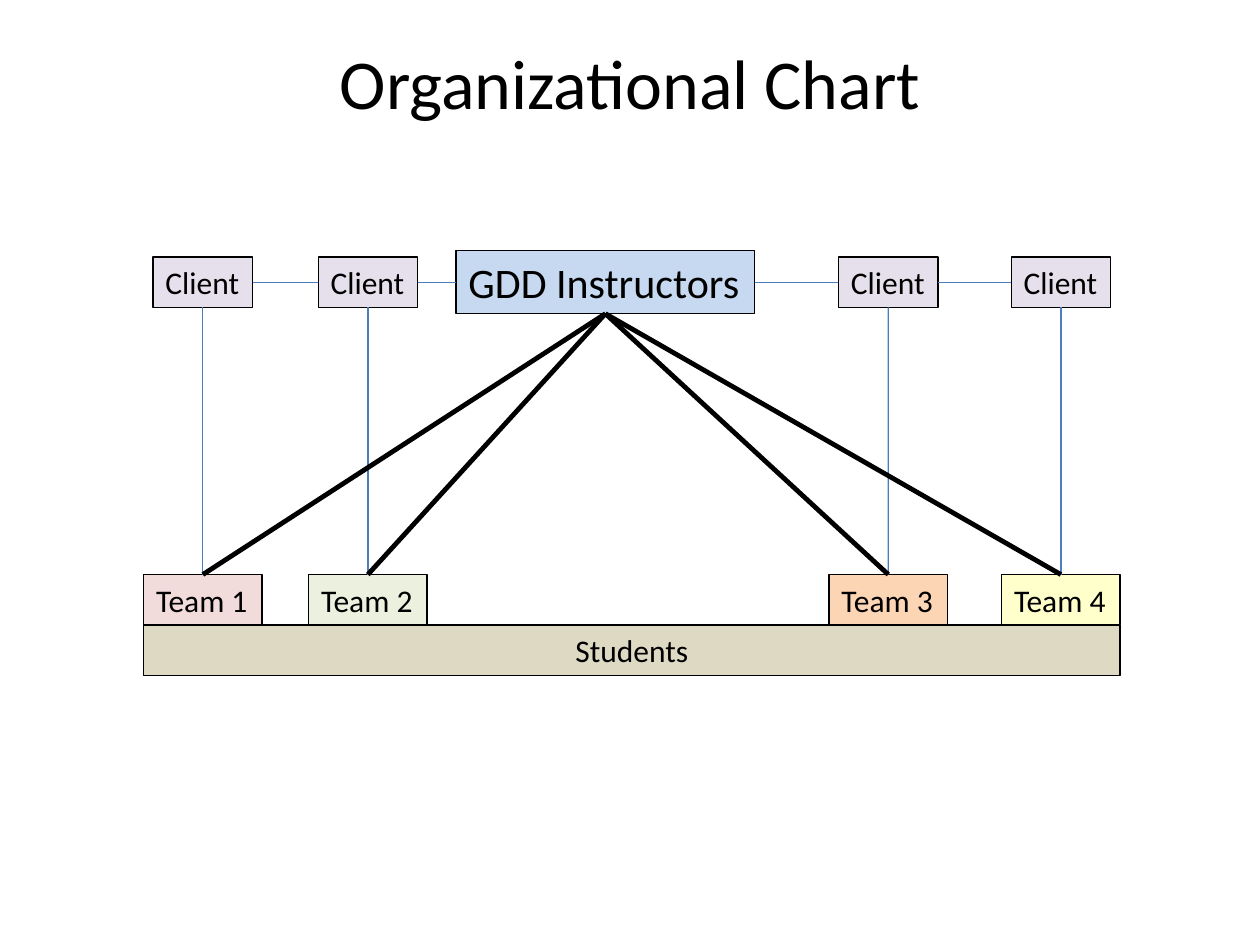
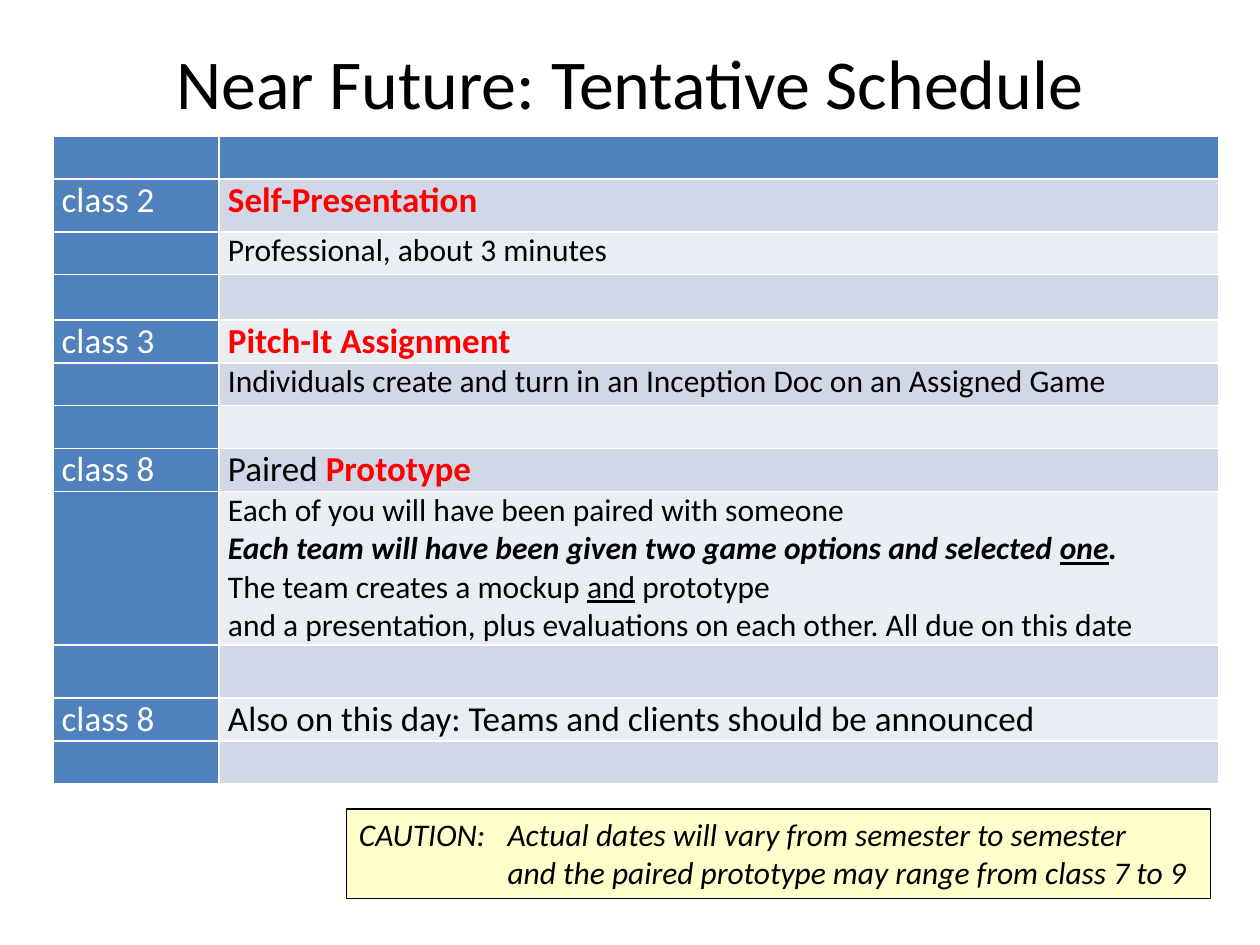
"""Build an organizational chart slide and a tentative schedule slide."""
from itertools import pairwise

from lxml.etree import SubElement
from pptx import Presentation
from pptx.dml.color import RGBColor
from pptx.enum.shapes import MSO_CONNECTOR as CONN
from pptx.enum.text import MSO_ANCHOR as ANCHOR, MSO_AUTO_SIZE as AUTO, PP_ALIGN as ALIGN
from pptx.oxml import parse_xml
from pptx.oxml.ns import nsdecls, qn
from pptx.util import Inches, Pt

FONT = "Calibri"
BLACK, WHITE, RED = "000000", "FFFFFF", "FF0000"
LILAC, SKY, SAND, YELLOW = "E6E0EC", "C6D9F1", "DDD9C3", "FFFFCC"
LINK, BLUE, BANDS = "4B7EBC", "4F81BD", ("E9EDF4", "D0D8E8")
TOP, LEFT, BOTTOM, RIGHT = range(4)

TEAMS = [
    ("Team 1", 1.61, "F2DCDB"),
    ("Team 2", 2.92, "EBF1DE"),
    ("Team 3", 7.05, "FCD5B5"),
    ("Team 4", 8.42, YELLOW),
]
CLIENT_W, TEAM_W, BOX_H = 0.79, 0.94, 0.4
CLIENT_Y, TEAM_Y = 2.04, 4.56

HEAD = {"size": 20}
KEY = {"size": 20, "color": RED, "bold": True}
STRONG = {"bold": True, "italic": True}
SCHEDULE = [
    (0.34, "", []),
    (0.42, "class 2", [[("Self-Presentation", KEY)]]),
    (0.34, "", [[("Professional, about 3 minutes", {})]]),
    (0.36, "", []),
    (0.34, "class 3", [[("Pitch-It Assignment", KEY)]]),
    (0.34, "", [[("Individuals create and turn in an Inception Doc on an Assigned Game", {})]]),
    (0.34, "", []),
    (0.34, "class 8", [[("Paired ", HEAD), ("Prototype", KEY)]]),
    (1.22, "", [
        [("Each of you will have been paired with someone", {})],
        [("Each team will have been given two game options and selected ", STRONG),
         ("one", {**STRONG, "underline": True}), (".", STRONG)],
        [("The team creates a mockup ", {}), ("and", {"underline": True}),
         (" prototype", {}), ("\n", {}),
         ("and a presentation, plus evaluations on each other. All due on this date", {})],
    ]),
    (0.42, "", []),
    (0.34, "class 8", [[("Also on this day: Teams and clients should be announced", HEAD)]]),
    (0.34, "", []),
]
COLS = (1.32, 7.93)
CAUTION = [
    "CAUTION:\tActual dates will vary from semester to semester",
    "and the paired prototype may range from class 7 to 9",
]
CAUTION_INDENT = 1.18


def rgb(color):
    return RGBColor.from_string(color)


def add_run(p, text, size=18, color=BLACK, bold=False, italic=False, underline=False):
    if text == "\n":
        p.add_line_break()
        return
    r = p.add_run()
    r.text = text
    f = r.font
    f.name, f.size, f.color.rgb = FONT, Pt(size), rgb(color)
    f.bold, f.italic, f.underline = bold, italic, underline


def fill_text(tf, paragraphs):
    for i, runs in enumerate(paragraphs):
        p = tf.add_paragraph() if i else tf.paragraphs[0]
        for text, style in runs:
            add_run(p, text, **style)


def add_slide(prs, title):
    s = prs.slides.add_slide(prs.slide_layouts[5])
    sp = s.shapes.title
    sp.left, sp.top, sp.width, sp.height = map(Inches, (0.5, 0.3, 9, 0.7))
    tf = sp.text_frame
    tf.vertical_anchor = ANCHOR.MIDDLE
    p = tf.paragraphs[0]
    p.alignment = ALIGN.CENTER
    add_run(p, title, size=40)
    return s


def add_box(s, at, fill, paragraphs, wrap=False):
    sp = s.shapes.add_textbox(*map(Inches, at))
    sp.fill.solid()
    sp.fill.fore_color.rgb = rgb(fill)
    sp.line.color.rgb = rgb(BLACK)
    sp.line.width = Pt(0.75)
    tf = sp.text_frame
    tf.word_wrap, tf.auto_size = wrap, AUTO.SHAPE_TO_FIT_TEXT
    fill_text(tf, paragraphs)
    return sp


def join(s, start, start_side, end, end_side, color=LINK, width=0.75):
    c = s.shapes.add_connector(CONN.STRAIGHT, 0, 0, 0, 0)
    c.begin_connect(start, start_side)
    c.end_connect(end, end_side)
    c.line.color.rgb = rgb(color)
    c.line.width = Pt(width)
    SubElement(c._element.spPr, qn("a:effectLst"))


def add_org_chart(prs):
    s = add_slide(prs, "Organizational Chart")
    clients = [add_box(s, (x - CLIENT_W / 2, CLIENT_Y, CLIENT_W, BOX_H), LILAC, [[("Client", {})]])
               for _, x, _ in TEAMS]
    gdd = add_box(s, (3.62, 1.99, 2.37, 0.5), SKY, [[("GDD Instructors", {"size": 24})]])
    teams = [add_box(s, (x - TEAM_W / 2, TEAM_Y, TEAM_W, BOX_H), fill, [[(name, {})]])
             for name, x, fill in TEAMS]
    for client, team in zip(clients, teams):
        join(s, client, BOTTOM, team, TOP)
    for a, b in pairwise([*clients[:2], gdd, *clients[2:]]):
        join(s, a, RIGHT, b, LEFT)
    for team in teams:
        join(s, gdd, BOTTOM, team, TOP, BLACK, 2.75)
    left, right = TEAMS[0][1] - TEAM_W / 2, TEAMS[-1][1] + TEAM_W / 2
    students = add_box(s, (left, TEAM_Y + BOX_H, right - left, BOX_H), SAND,
                       [[("Students", {})]], wrap=True)
    students.text_frame.paragraphs[0].alignment = ALIGN.CENTER


def style_cell(cell, fill):
    cell.margin_left = cell.margin_right = Inches(0.07)
    cell.margin_top = cell.margin_bottom = 0
    cell.fill.solid()
    cell.fill.fore_color.rgb = rgb(fill)
    for i, side in enumerate("LRTB"):
        cell._tc.tcPr.insert(i, parse_xml(
            f'<a:ln{side} {nsdecls("a")} w="{Pt(1)}"><a:solidFill>'
            f'<a:srgbClr val="{WHITE}"/></a:solidFill></a:ln{side}>'))


def add_schedule(prs):
    s = add_slide(prs, "Near Future: Tentative Schedule")
    height = sum(h for h, _, _ in SCHEDULE)
    at = (0.42, 1.08, sum(COLS), height)
    table = s.shapes.add_table(len(SCHEDULE), len(COLS), *map(Inches, at)).table
    for col, w in zip(table.columns, COLS):
        col.width = Inches(w)
    for i, (h, day, paragraphs) in enumerate(SCHEDULE):
        table.rows[i].height = Inches(h)
        day_cell, task_cell = table.rows[i].cells
        style_cell(day_cell, BLUE)
        style_cell(task_cell, BANDS[i % 2] if i else BLUE)
        if day:
            fill_text(day_cell.text_frame, [[(day, {"size": 20, "color": WHITE})]])
        fill_text(task_cell.text_frame, paragraphs)
    caution = add_box(s, (2.75, 6.42, 6.86, 0.71), YELLOW,
                      [[(text, {"italic": True})] for text in CAUTION], wrap=True)
    for p, hang in zip(caution.text_frame.paragraphs, (CAUTION_INDENT, 0)):
        pPr = p._p.get_or_add_pPr()
        pPr.set("marL", str(Inches(CAUTION_INDENT)))
        pPr.set("indent", str(-Inches(hang)))


def main():
    prs = Presentation()
    prs.slide_width, prs.slide_height = Inches(10), Inches(7.5)
    add_org_chart(prs)
    add_schedule(prs)
    prs.save("out.pptx")


if __name__ == "__main__":
    main()
